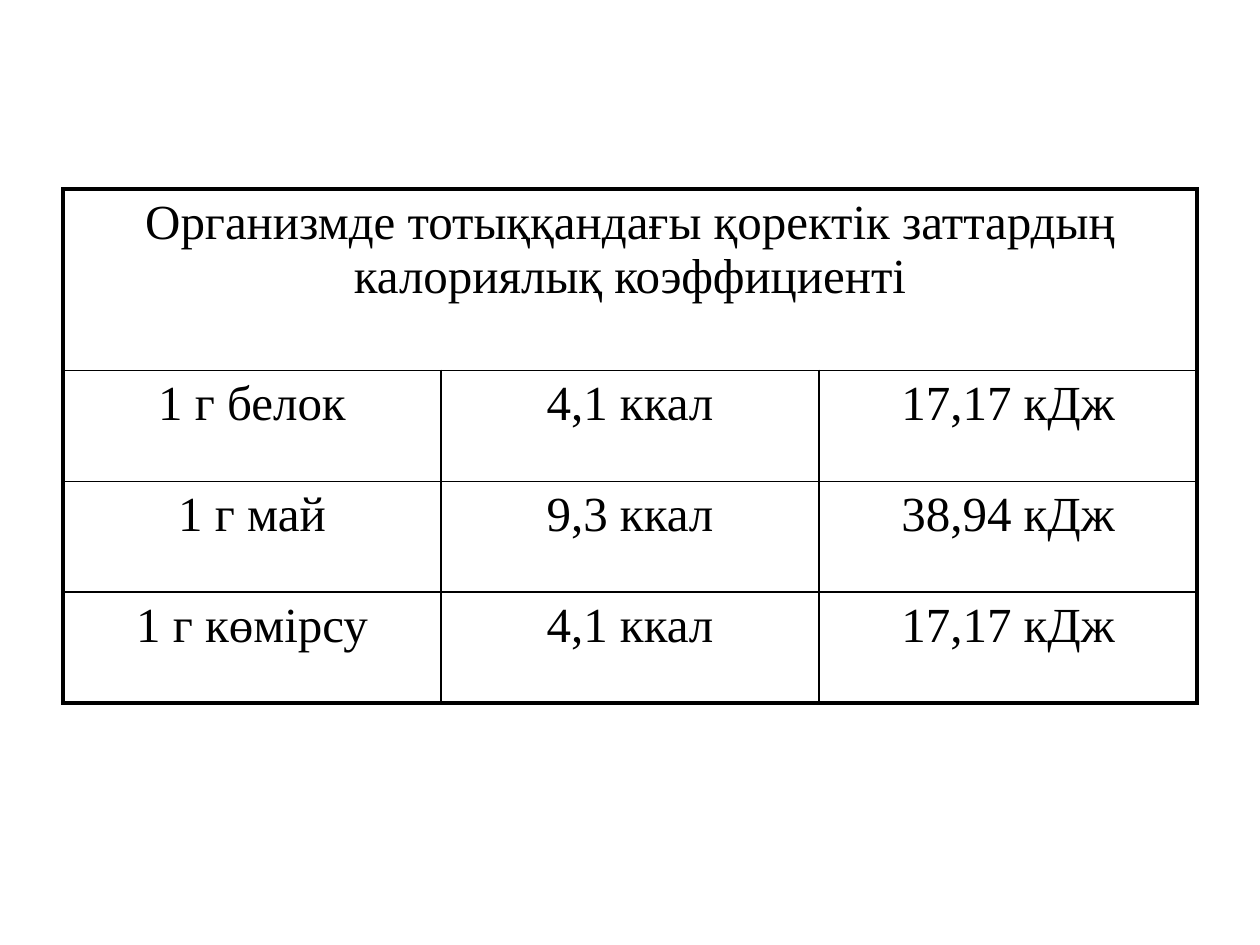
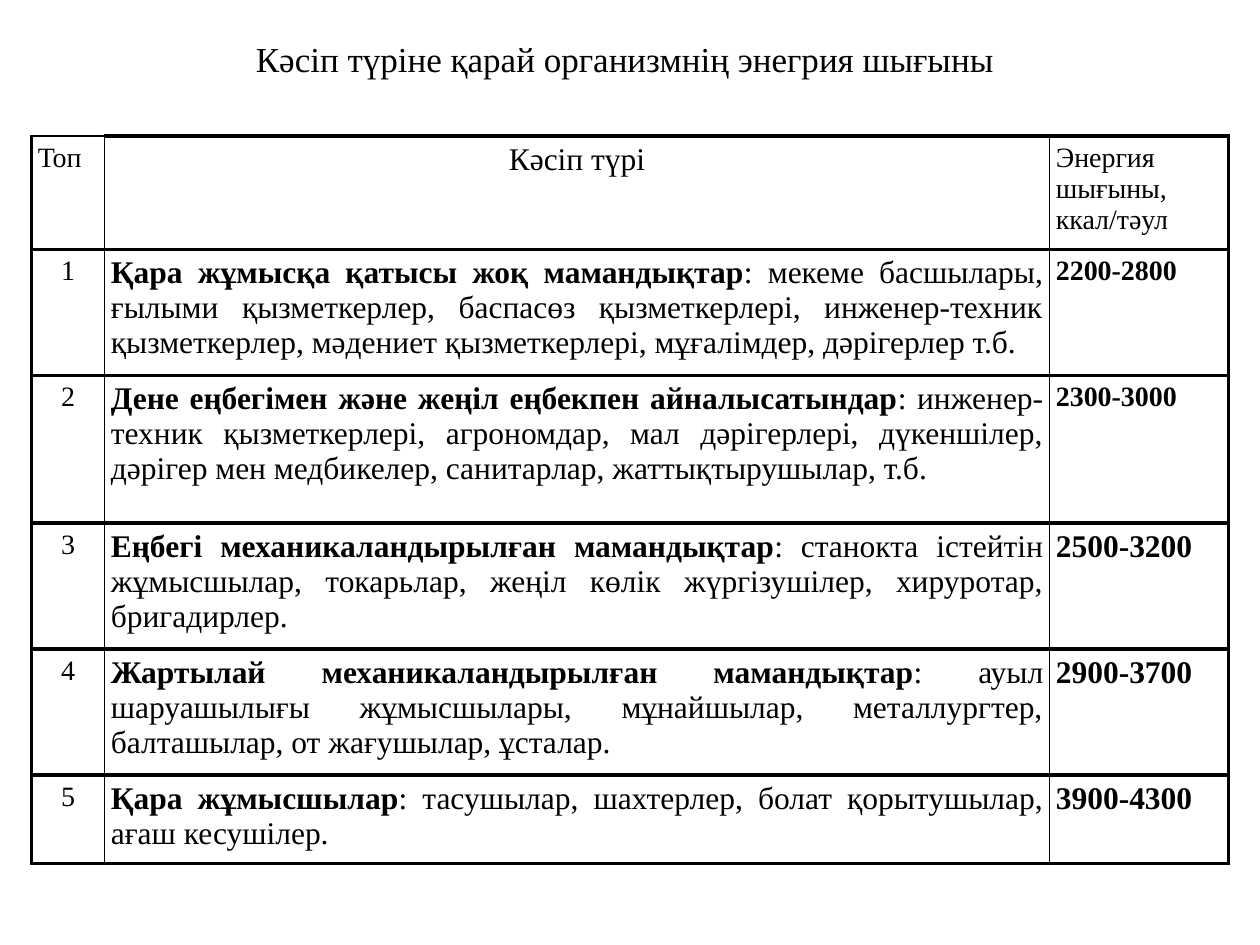
from pptx import Presentation
from pptx.dml.color import RGBColor
from pptx.enum.text import MSO_AUTO_SIZE as AutoSize, PP_ALIGN as Align
from pptx.oxml import parse_xml
from pptx.oxml.ns import nsdecls
from pptx.util import Inches, Pt

COLOURS = {"ink": "000000"}
FONT = "Times New Roman"
THIN, THICK = 1, 2.25
PLAIN_TABLE = "{2D5ABB26-0587-4C30-8999-92F81FD0307C}"


class SlideBuilder:
    """Holds the shared style and the current slide."""

    def __init__(self, width, height):
        self.deck = Presentation()
        self.deck.slide_width, self.deck.slide_height = Inches(width), Inches(height)
        self.page = None

    def new_page(self):
        self.page = self.deck.slides.add_slide(self.deck.slide_layouts[6])

    def fill_text(self, frame, spans, size, align=Align.LEFT, before=0):
        """Fill a frame with one paragraph of (text, bold) spans."""
        para = frame.paragraphs[0]
        para.alignment, para.space_before = align, Pt(before)
        for text, bold in spans:
            span = para.add_run()
            span.text = text
            for name, value in {"name": FONT, "size": Pt(size), "bold": bold}.items():
                setattr(span.font, name, value)
            span.font.color.rgb = RGBColor.from_string(COLOURS["ink"])

    def set_margins(self, target):
        for side in ("left", "top", "right", "bottom"):
            setattr(target, f"margin_{side}", Inches(0.05))

    def title(self, text, left, top, width, height):
        box = self.page.shapes.add_textbox(*map(Inches, (left, top, width, height)))
        frame = box.text_frame
        frame.word_wrap, frame.auto_size = True, AutoSize.SHAPE_TO_FIT_TEXT
        self.set_margins(frame)
        self.fill_text(frame, [(text, False)], 20, Align.CENTER, 12)

    def border(self, cell, widths):
        """Add the cell's edge lines, in the order left, right, top, bottom."""
        for index, (side, width) in enumerate(zip("LRTB", widths)):
            line = parse_xml(
                f'<a:ln{side} {nsdecls("a")} w="{Pt(width)}" cap="flat" cmpd="sng">'
                f'<a:solidFill><a:srgbClr val="{COLOURS["ink"]}"/></a:solidFill>'
                f'<a:prstDash val="solid"/></a:ln{side}>')
            cell._tc.get_or_add_tcPr().insert(index, line)

    def table(self, left, top, columns, heights, rows, row_line, thin_corner=False):
        """Draw a thick-framed table; a lone cell in a row spans its width."""
        shape = self.page.shapes.add_table(
            len(heights), len(columns), Inches(left), Inches(top),
            Inches(sum(columns)), Inches(sum(heights)))
        table = shape.table
        table.first_row = table.horz_banding = False
        table._tbl.tblPr.find("{*}tableStyleId").text = PLAIN_TABLE
        for column, width in zip(table.columns, columns):
            column.width = Inches(width)
        last_row, last_column = len(heights) - 1, len(columns) - 1
        for r, (height, row) in enumerate(zip(heights, rows)):
            table.rows[r].height = Inches(height)
            if len(row) == 1:
                table.cell(r, 0).merge(table.cell(r, last_column))
            for c, content in enumerate(row):
                cell = table.cell(r, c)
                self.set_margins(cell)
                cell.fill.background()
                self.fill_text(cell.text_frame, **content)
                top_line = THICK if r == 0 else row_line
                if thin_corner and r == c == 0:
                    top_line = THIN
                self.border(cell, (
                    THICK if c == 0 else THIN,
                    THICK if c == len(row) - 1 else THIN,
                    top_line,
                    THICK if r == last_row else row_line))


def entry(text, size, align=Align.LEFT, before=3, bold=False):
    return {"spans": [(text, bold)], "size": size, "align": align, "before": before}


# Calorie coefficients
COEFFICIENTS = [
    ("Организмде тотыққандағы қоректік заттардың калориялық коэффициенті",),
    ("1 г белок", "4,1 ккал", "17,17 кДж"),
    ("1 г май", "9,3 ккал", "38,94 кДж"),
    ("1 г көмірсу", "4,1 ккал", "17,17 кДж"),
]

# Occupation group, examples, daily energy, energy text size, space above
OCCUPATIONS = [
    ("Қара жұмысқа қатысы жоқ мамандықтар",
     ": мекеме басшылары, ғылыми қызметкерлер, баспасөз қызметкерлері, "
     "инженер-техник қызметкерлер, мәдениет қызметкерлері, мұғалімдер, "
     "дәрігерлер т.б. ", "2200-2800", 16, 10),
    ("Дене еңбегімен және жеңіл еңбекпен айналысатындар",
     ": инженер-техник қызметкерлері, агрономдар, мал дәрігерлері, дүкеншілер, "
     "дәрігер мен медбикелер, санитарлар, жаттықтырушылар, т.б. ",
     "2300-3000", 16, 4),
    ("Еңбегі механикаландырылған мамандықтар",
     ": станокта істейтін жұмысшылар, токарьлар, жеңіл көлік жүргізушілер, "
     "хируротар, бригадирлер.", "2500-3200", 18, 4),
    ("Жартылай механикаландырылған мамандықтар",
     ": ауыл шаруашылығы жұмысшылары, мұнайшылар, металлургтер, балташылар, "
     "от жағушылар, ұсталар.", "2900-3700", 18, 4),
    ("Қара жұмысшылар",
     ": тасушылар, шахтерлер, болат қорытушылар, ағаш кесушілер.",
     "3900-4300", 18, 4),
]


def coefficient_page(builder):
    builder.new_page()
    rows = [[entry(text, 28, Align.CENTER, 6) for text in row] for row in COEFFICIENTS]
    builder.table(0.5, 1.5, [3] * 3, [1.44] + [0.88] * 3, rows, THIN)


def occupation_page(builder):
    builder.new_page()
    builder.title("Кәсіп түріне қарай организмнің энегрия шығыны", 0.55, 0.25, 8.82, 0.41)
    rows = [[entry("Топ", 16), entry("Кәсіп түрі", 18, Align.CENTER, 4),
             entry("Энергия шығыны, ккал/тәул", 16)]]
    for number, (group, examples, energy, size, before) in enumerate(OCCUPATIONS, 1):
        rows.append([
            entry(str(number), 16, Align.CENTER),
            {"spans": [(group, True), (examples, False)], "size": 18,
             "align": Align.JUSTIFY, "before": before},
            entry(energy, size, before=3 if size == 16 else 4, bold=True)])
    builder.table(0.25, 1.08, [0.58, 7.5, 1.42], [0.9, 1, 1.17, 1, 1, 0.7],
                  rows, THICK, thin_corner=True)


def main():
    builder = SlideBuilder(10, 7.5)
    coefficient_page(builder)
    occupation_page(builder)
    builder.deck.save("out.pptx")


if __name__ == "__main__":
    main()
